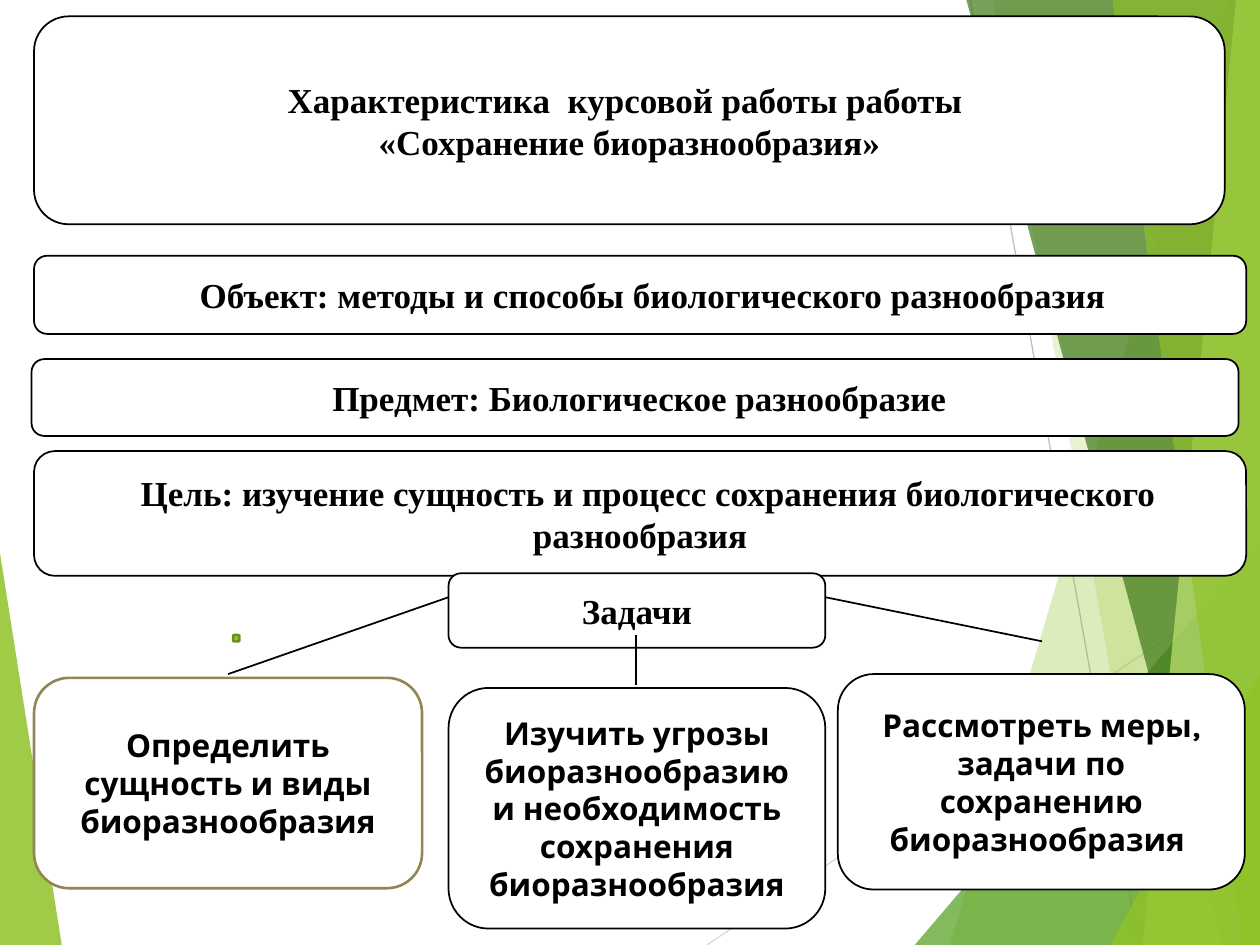
from dataclasses import dataclass

from lxml import etree
from pptx import Presentation
from pptx.dml.color import RGBColor
from pptx.enum.shapes import MSO_CONNECTOR, MSO_SHAPE
from pptx.enum.text import MSO_ANCHOR, PP_ALIGN
from pptx.oxml.ns import qn
from pptx.util import Inches, Pt

ROUNDED = MSO_SHAPE.ROUNDED_RECTANGLE
STRAIGHT = MSO_CONNECTOR.STRAIGHT
MIDDLE = MSO_ANCHOR.MIDDLE
CENTER = PP_ALIGN.CENTER
W, H = 10, 7.5


@dataclass(frozen=True)
class Theme:
    white: str = "FFFFFF"
    black: str = "000000"
    green: str = "90C226"
    mid_green: str = "54A021"
    dark_green: str = "3F7819"
    pale_green: str = "C0E474"
    dot_line: str = "6B901C"
    olive: str = "918655"
    grey: str = "BFBFBF"
    light_grey: str = "D9D9D9"
    serif: str = "Times New Roman"
    sans: str = "Karla"
    heading: int = 20
    task: int = 18


T = Theme()


def rgb(value):
    return RGBColor.from_string(value)


def add_facet(s, points, color, opacity):
    """Translucent polygon of the background."""
    pts = [(Inches(x), Inches(y)) for x, y in points]
    builder = s.shapes.build_freeform(*pts[0])
    builder.add_line_segments(pts[1:], close=True)
    sp = builder.convert_to_shape()
    sp.shadow.inherit = False
    sp.line.fill.background()
    sp.fill.solid()
    sp.fill.fore_color.rgb = rgb(color)
    clr = sp.fill._xPr.find(qn("a:solidFill"))[0]
    etree.SubElement(clr, qn("a:alpha")).set("val", str(opacity * 1000))


def add_line(s, start, end, color=T.black, width=1):
    cx = s.shapes.add_connector(STRAIGHT, *map(Inches, start + end))
    cx.line.color.rgb = rgb(color)
    cx.line.width = Pt(width)
    etree.SubElement(cx._element.spPr, qn("a:effectLst"))


def add_box(s, box, fill=T.white, line=T.black, width=1):
    sp = s.shapes.add_shape(ROUNDED, *map(Inches, box))
    sp.shadow.inherit = False
    sp.fill.solid()
    sp.fill.fore_color.rgb = rgb(fill)
    sp.line.color.rgb = rgb(line)
    sp.line.width = Pt(width)
    return sp


def add_text(sp, text, font=T.serif, size=T.heading, indent=0):
    tf = sp.text_frame
    tf.word_wrap = True
    tf.vertical_anchor = MIDDLE
    p = tf.paragraphs[0]
    p.text = text
    p.alignment = CENTER
    p.font.name = font
    p.font.size = Pt(size)
    p.font.bold = True
    p.font.color.rgb = rgb(T.black)
    if indent:
        p._p.get_or_add_pPr().set("indent", str(Inches(indent)))


def add_background(s):
    add_facet(s, [(0, 4.39), (0.49, H), (0, H)], T.green, 85)
    add_line(s, (5.61, H), (W, 4.57), T.light_grey, 0.75)
    add_line(s, (7.7, 0), (9.04, H), T.grey, 0.75)
    # Facets along the right edge: top x, bottom x, colour, opacity
    for top, bottom, color, opacity in [
        (9.75, 7.54, T.green, 30),
        (7.88, 9.19, T.green, 20),
        (None, 7.26, T.mid_green, 72),
        (7.67, 9.7, T.dark_green, 70),
        (9.81, 9.07, T.pale_green, 70),
        (8.83, 9.86, T.green, 65),
    ]:
        if top is None:
            points = [(bottom, H), (W, 4.29), (W, H)]
        else:
            points = [(top, 0), (bottom, H), (W, H), (W, 0)]
        add_facet(s, points, color, opacity)
    add_facet(s, [(8.81, H), (W, 5.35), (W, H)], T.green, 80)


def add_headings(s):
    for box, text, indent in [
        ((0.27, 0.13, 9.45, 1.65),
         "Характеристика  курсовой работы работы \v«Сохранение биоразнообразия»", 0),
        ((0.27, 2.03, 9.62, 0.62),
         "Объект: методы и способы биологического разнообразия", 0.2),
        ((0.25, 2.85, 9.58, 0.61), "Предмет: Биологическое разнообразие", 0.07),
        ((0.27, 3.58, 9.62, 0.99),
         "Цель: изучение сущность и процесс сохранения биологического разнообразия", 0.13),
        ((3.56, 4.55, 2.99, 0.59), "Задачи", 0),
    ]:
        add_text(add_box(s, box), text, indent=indent)


def add_tasks(s):
    for box, text, line, width in [
        ((0.27, 5.38, 3.08, 1.67),
         "Определить сущность и виды биоразнообразия", T.olive, 1.5),
        ((3.56, 5.46, 2.99, 1.91),
         "Изучить угрозы биоразнообразию и необходимость сохранения биоразнообразия",
         T.black, 1),
        ((6.65, 5.35, 3.23, 1.71),
         "Рассмотреть меры, задачи по сохранению биоразнообразия ", T.black, 1),
    ]:
        add_text(add_box(s, box, line=line, width=width), text, T.sans, T.task)

    # Branches from the tasks heading
    for start, end in [((3.56, 4.74), (1.81, 5.35)),
                       ((5.05, 5.04), (5.05, 5.44)),
                       ((6.55, 4.74), (8.27, 5.09))]:
        add_line(s, start, end)


def main():
    prs = Presentation()
    prs.slide_width, prs.slide_height = Inches(W), Inches(H)
    s = prs.slides.add_slide(prs.slide_layouts[6])
    add_background(s)
    add_headings(s)
    add_tasks(s)
    # Small green dot
    add_box(s, (1.85, 5.04, 0.05, 0.05), T.green, T.dot_line, 1.5)
    prs.save("out.pptx")


if __name__ == "__main__":
    main()
